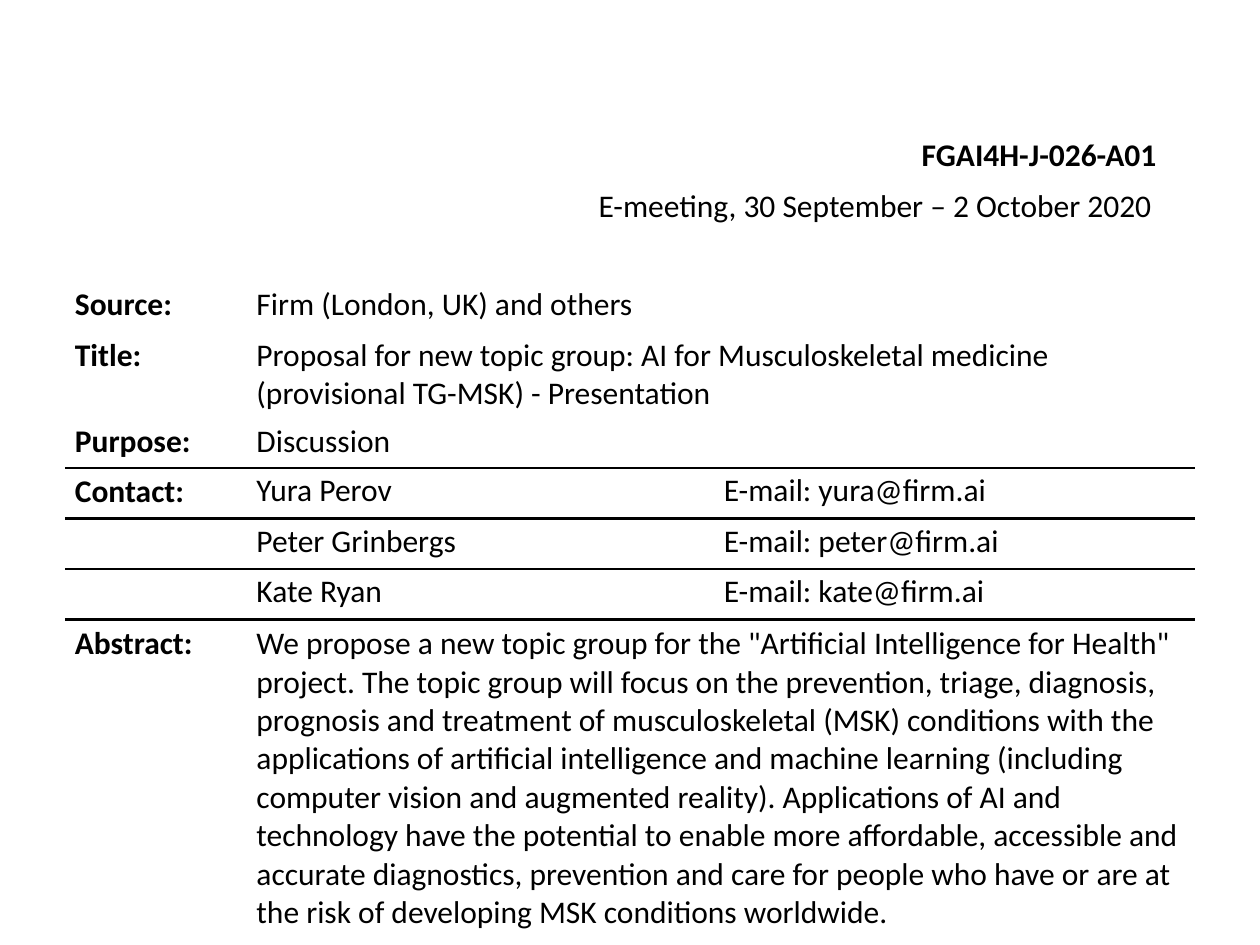
import pptx
import pptx.dml.color
import pptx.enum.text
import pptx.oxml
import pptx.util
from pptx.util import Cm

NS = 'xmlns:a="http://schemas.openxmlformats.org/drawingml/2006/main"'
NO_STYLE = "{2D5ABB26-0587-4C30-8999-92F81FD0307C}"


def rgb(color):
    return pptx.dml.color.RGBColor.from_string(color)


def write(tf, text, bold=False, size=18, color="000000", align="LEFT"):
    p = tf.paragraphs[0]
    p.alignment = getattr(pptx.enum.text.PP_ALIGN, align)
    r = p.add_run()
    r.text = text
    r.font.name = "Calibri"
    r.font.size = pptx.util.Pt(size)
    r.font.bold = bold
    r.font.color.rgb = rgb(color)


prs = pptx.Presentation()
prs.slide_width, prs.slide_height = Cm(25.4), Cm(19.05)
s = prs.slides.add_slide(prs.slide_layouts[5])

# Document number and meeting line, right-aligned
number = s.shapes.title
meeting = s.shapes.add_textbox(0, 0, 0, 0)
headings = [
    (number, "FGAI4H-J-026-A01", True, (18.26, 2.59, 5.31, 1.02)),
    (meeting, "E-meeting, 30 September – 2 October 2020", False,
     (11.66, 3.63, 11.81, 1.02)),
]
for sp, text, bold, box in headings:
    sp.left, sp.top, sp.width, sp.height = [Cm(v) for v in box]
    tf = sp.text_frame
    tf.word_wrap = False
    tf.auto_size = pptx.enum.text.MSO_AUTO_SIZE.SHAPE_TO_FIT_TEXT
    tf.vertical_anchor = pptx.enum.text.MSO_ANCHOR.TOP
    write(tf, text, bold=bold, align="RIGHT")

# Table content: label, text, e-mail (None where the text spans both columns)
rows = [
    ("Source:", "Firm (London, UK) and others", None),
    ("Title:", "Proposal for new topic group: AI for Musculoskeletal medicine "
     "(provisional TG-MSK) - Presentation", None),
    ("Purpose:", "Discussion", None),
    ("Contact:", "Yura Perov", "E-mail: yura@firm.ai"),
    ("", "Peter Grinbergs", "E-mail: peter@firm.ai"),
    ("", "Kate Ryan", "E-mail: kate@firm.ai"),
    ("Abstract:", 'We propose a new topic group for the "Artificial Intelligence '
     'for Health" project. The topic group will focus on the prevention, triage, '
     "diagnosis, prognosis and treatment of musculoskeletal (MSK) conditions with "
     "the applications of artificial intelligence and machine learning (including "
     "computer vision and augmented reality). Applications of AI and technology "
     "have the potential to enable more affordable, accessible and accurate "
     "diagnostics, prevention and care for people who have or are at the risk of "
     "developing MSK conditions worldwide.", None),
]
widths = [3.66, 9.42, 9.68]
heights = [1.02, 1.73, 1.02, 1.02, 1.02, 1.02, 6.27]

frame = s.shapes.add_table(len(rows), len(widths), Cm(1.32), Cm(5.66),
                           Cm(sum(widths)), Cm(sum(heights)))
table = frame.table
table.first_row = table.horz_banding = False
table._tbl.tblPr.find(pptx.oxml.ns.qn("a:tableStyleId")).text = NO_STYLE
for column, width in zip(table.columns, widths):
    column.width = Cm(width)
for row, height in zip(table.rows, heights):
    row.height = Cm(height)

contacts = [i for i, row in enumerate(rows) if row[2]]
for i, row in enumerate(rows):
    if row[2] is None:
        table.cell(i, 1).merge(table.cell(i, 2))
    for j, text in enumerate(row):
        cell = table.cell(i, j)
        cell.margin_left = cell.margin_right = Cm(0.19)
        inset = 0.08 if i in contacts and j else 0.1
        cell.margin_top = cell.margin_bottom = Cm(inset)
        if text:
            write(cell.text_frame, text, bold=j == 0)
        # Rules above and below every contact row
        tcPr = cell._tc.get_or_add_tcPr()
        for tag, neighbour in (("lnT", i - 1), ("lnB", i + 1)):
            if i in contacts or neighbour in contacts:
                tcPr.append(pptx.oxml.parse_xml(
                    f'<a:{tag} {NS} w="19050"><a:solidFill>'
                    f'<a:srgbClr val="000000"/></a:solidFill></a:{tag}>'))
        cell.fill.background()

prs.save("out.pptx")
